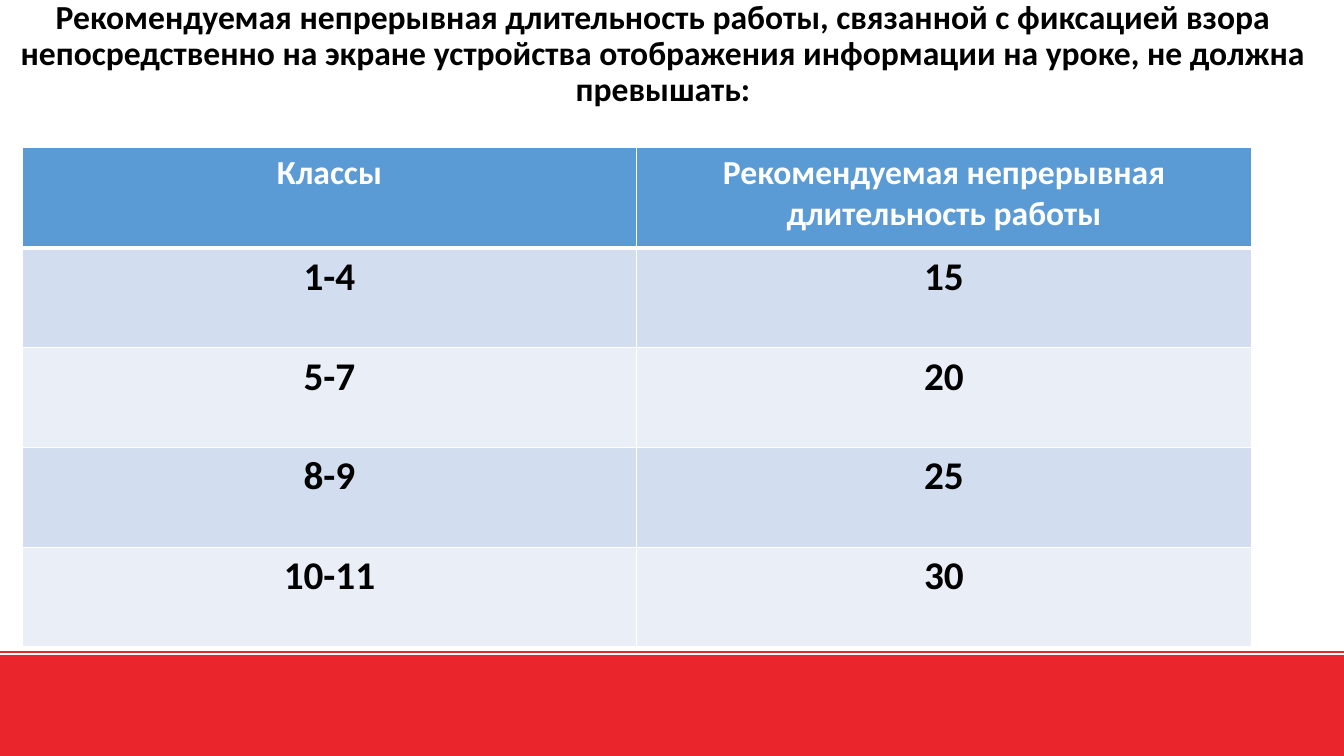
from dataclasses import dataclass

import lxml.etree
import pptx
import pptx.dml.color
import pptx.enum.shapes
import pptx.enum.text
import pptx.oxml.ns
import pptx.util

Inches = pptx.util.Inches
Pt = pptx.util.Pt


@dataclass(frozen=True)
class Theme:
    font: str = "Calibri"
    red: str = "EA252C"
    white: str = "FFFFFF"
    black: str = "000000"
    header: str = "5B9BD5"
    bands: tuple[str, str] = ("D2DEEF", "EAEFF7")
    text_size: float = 24
    value_size: float = 28
    grid_line: float = 1
    header_line: float = 3


@dataclass(frozen=True)
class Row:
    grades: str
    duration: str
    height: float = 0.99


THEME = Theme()
SLIDE_W, SLIDE_H = 13.33, 7.5
BAND_TOP, RULE_TOP = 6.51, 6.47
TITLE = (
    "Рекомендуемая непрерывная длительность работы, связанной с фиксацией взора "
    "непосредственно на экране устройства отображения информации на уроке, "
    "не должна превышать:"
)
ROWS = [
    Row("Классы", "Рекомендуемая непрерывная длительность работы", 1),
    Row("1-4", "15"),
    Row("5-7", "20"),
    Row("8-9", "25"),
    Row("10-11", "30"),
]


def rgb(color: str) -> pptx.dml.color.RGBColor:
    return pptx.dml.color.RGBColor.from_string(color)


def add_text(tf, text: str, size: float, color: str):
    """Write one bold centred run in the first paragraph and return the paragraph."""
    p = tf.paragraphs[0]
    p.alignment = pptx.enum.text.PP_ALIGN.CENTER
    r = p.add_run()
    r.text = text
    r.font.name = THEME.font
    r.font.size = Pt(size)
    r.font.bold = True
    r.font.color.rgb = rgb(color)
    return p


def set_borders(cell, top: float, bottom: float) -> None:
    """Draw white cell borders; top and bottom widths are in points."""
    qn = pptx.oxml.ns.qn
    tc_pr = cell._tc.get_or_add_tcPr()
    widths = {"L": THEME.grid_line, "R": THEME.grid_line, "T": top, "B": bottom}
    for i, (side, width) in enumerate(widths.items()):
        ln = lxml.etree.Element(qn(f"a:ln{side}"), w=str(Pt(width)))
        fill = lxml.etree.SubElement(ln, qn("a:solidFill"))
        lxml.etree.SubElement(fill, qn("a:srgbClr"), val=THEME.white)
        tc_pr.insert(i, ln)


def add_footer(slide) -> None:
    y = Inches(RULE_TOP)
    rule = slide.shapes.add_connector(
        pptx.enum.shapes.MSO_CONNECTOR.STRAIGHT, 0, y, Inches(SLIDE_W), y
    )
    rule.line.color.rgb = rgb(THEME.red)
    rule.line.width = Pt(1.5)
    lxml.etree.SubElement(rule._element.spPr, pptx.oxml.ns.qn("a:effectLst"))

    band = slide.shapes.add_shape(
        pptx.enum.shapes.MSO_SHAPE.RECTANGLE,
        0, Inches(BAND_TOP), Inches(SLIDE_W), Inches(SLIDE_H - BAND_TOP),
    )
    band.shadow.inherit = False
    band.fill.solid()
    band.fill.fore_color.rgb = rgb(THEME.red)
    band.line.color.rgb = rgb(THEME.red)
    band.line.width = Pt(1)


def add_duration_table(slide, rows: list[Row]) -> None:
    height = sum(row.height for row in rows)
    table = slide.shapes.add_table(
        len(rows), 2, Inches(0.22), Inches(1.46), Inches(12.19), Inches(height)
    ).table
    for i, row in enumerate(rows):
        table.rows[i].height = Inches(row.height)
        is_header = i == 0
        fill = THEME.header if is_header else THEME.bands[(i - 1) % 2]
        size = THEME.text_size if is_header else THEME.value_size
        color = THEME.white if is_header else THEME.black
        top = THEME.header_line if i == 1 else THEME.grid_line
        bottom = THEME.header_line if is_header else THEME.grid_line
        for cell, text in zip(table.rows[i].cells, (row.grades, row.duration)):
            cell.fill.solid()
            cell.fill.fore_color.rgb = rgb(fill)
            set_borders(cell, top, bottom)
            add_text(cell.text_frame, text, size, color)


def add_title(slide) -> None:
    tf = slide.shapes.add_textbox(0, 0, Inches(13.15), Inches(1.45)).text_frame
    tf.word_wrap = True
    tf.margin_top = 0
    tf.vertical_anchor = pptx.enum.text.MSO_ANCHOR.TOP
    p = add_text(tf, TITLE, THEME.text_size, THEME.black)
    p.line_spacing = 0.9


def main() -> None:
    prs = pptx.Presentation()
    prs.slide_width = Inches(SLIDE_W)
    prs.slide_height = Inches(SLIDE_H)
    slide = prs.slides.add_slide(prs.slide_layouts[6])
    add_footer(slide)
    add_duration_table(slide, ROWS)
    add_title(slide)
    prs.save("out.pptx")


if __name__ == "__main__":
    main()
